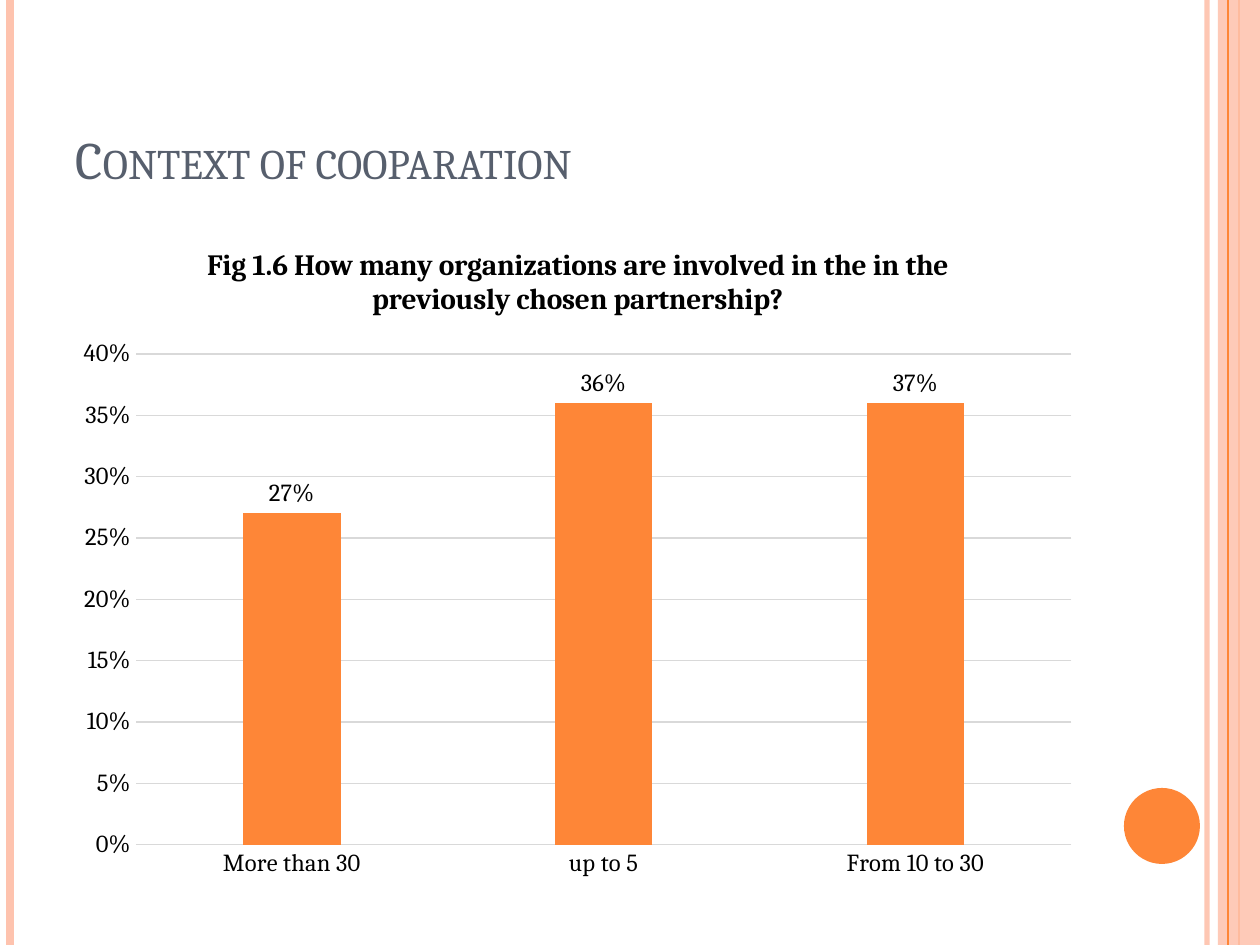
from lxml import etree
from pptx import Presentation
from pptx.chart.data import CategoryChartData
from pptx.dml.color import RGBColor
from pptx.enum.chart import XL_CHART_TYPE, XL_LABEL_POSITION, XL_TICK_MARK
from pptx.enum.shapes import MSO_CONNECTOR, MSO_SHAPE
from pptx.enum.text import MSO_ANCHOR, MSO_AUTO_SIZE, PP_ALIGN
from pptx.oxml.ns import qn
from pptx.util import Pt

COLUMNS = XL_CHART_TYPE.COLUMN_CLUSTERED
OUTSIDE_END = XL_LABEL_POSITION.OUTSIDE_END
NO_TICK = XL_TICK_MARK.NONE
STRAIGHT = MSO_CONNECTOR.STRAIGHT
RECTANGLE, OVAL = MSO_SHAPE.RECTANGLE, MSO_SHAPE.OVAL
BOTTOM, LEFT = MSO_ANCHOR.BOTTOM, PP_ALIGN.LEFT
FIXED_SIZE = MSO_AUTO_SIZE.NONE

EMU_PER_PX = 914400 / 126
WIDTH, HEIGHT = 1260, 945
CONTENT_LEFT, CONTENT_WIDTH = 63, 1029
FONT = "Cambria"
ORANGE, PEACH, GRAY, SLATE, BLACK = "FE8637", "FEC3AE", "D9D9D9", "575F6D", "000000"


def px(*lengths):
    return [round(length * EMU_PER_PX) for length in lengths]


def paint(fill, color, opacity=100):
    fill.solid()
    fill.fore_color.rgb = RGBColor.from_string(color)
    if opacity < 100:
        tint = fill._xPr.find(qn("a:solidFill")).find(qn("a:srgbClr"))
        etree.SubElement(tint, qn("a:alpha")).set("val", str(opacity * 1000))


prs = Presentation()
prs.slide_width, prs.slide_height = px(WIDTH, HEIGHT)
slide = prs.slides.add_slide(prs.slide_layouts[5])
shapes = slide.shapes

border_parts = [
    (STRAIGHT, (1207, 0, 1207, HEIGHT), PEACH, 93, 3),
    (STRAIGHT, (10, 0, 10, HEIGHT), PEACH, 100, 4.5),
    (STRAIGHT, (1239, 0, 1239, HEIGHT), ORANGE, 100, 1.5),
    (RECTANGLE, (1218, 0, 42, HEIGHT), PEACH, 87, None),
    (STRAIGHT, (1228, 0, 1228, HEIGHT), ORANGE, 100, 0.75),
    (OVAL, (1124, 788, 76, 76), ORANGE, 100, None),
]
for kind, box, color, opacity, weight in border_parts:
    if kind == STRAIGHT and weight:
        stripe = shapes.add_connector(kind, *px(*box))
        stripe.line.width = Pt(weight)
        paint(stripe.line.fill, color, opacity)
        etree.SubElement(stripe._element.spPr, qn("a:effectLst"))
    else:
        ornament = shapes.add_shape(kind, *px(*box))
        ornament.shadow.inherit = False
        ornament.line.fill.background()
        paint(ornament.fill, color, opacity)

heading = shapes.title
heading.left, heading.top, heading.width, heading.height = px(CONTENT_LEFT, 38, CONTENT_WIDTH, 158)
heading.text_frame.auto_size = FIXED_SIZE
heading.text_frame.vertical_anchor = BOTTOM
heading_line = heading.text_frame.paragraphs[0]
heading_line.alignment = LEFT

answers = CategoryChartData(number_format="0%")
answers.categories = ["More than 30", "up to 5", "From 10 to 30"]
answers.add_series("Series 1", [0.27, 0.36, 0.36])
chart = shapes.add_chart(COLUMNS, *px(CONTENT_LEFT, 220, CONTENT_WIDTH, 672), answers).chart
chart.has_legend = False
chart.has_title = True
chart.chart_title.include_in_layout = False
chart.font.name = FONT
chart.font.size = Pt(14)
paint(chart.font.fill, BLACK)

answer_axis, share_axis = chart.category_axis, chart.value_axis
for axis in (answer_axis, share_axis):
    axis.major_tick_mark = NO_TICK
share_axis.minimum_scale, share_axis.maximum_scale, share_axis.major_unit = 0, 0.4, 0.05
share_axis.format.line.fill.background()
for rule in (answer_axis.format.line, share_axis.major_gridlines.format.line):
    rule.width = Pt(0.75)
    paint(rule.fill, GRAY)

plot = chart.plots[0]
plot.vary_by_categories = False
plot.gap_width, plot.overlap = 219, -27
organizations = plot.series[0]
paint(organizations.format.fill, ORANGE)
shares = organizations.data_labels
shares.show_value = True
shares.position = OUTSIDE_END
for percentages in (share_axis.tick_labels, shares):
    percentages.number_format = "0%"
    percentages.number_format_is_linked = False

last_share = organizations.points[2].data_label
question_line = chart.chart_title.text_frame.paragraphs[0]
last_share_line = last_share.text_frame.paragraphs[0]
last_share.position = OUTSIDE_END

question = "Fig 1.6 How many organizations are involved in the in the previously chosen partnership?"
wording = [
    (heading_line, "Context of cooparation", 30, SLATE, False),
    (question_line, question, 16.8, BLACK, True),
    (last_share_line, "37%", 14, BLACK, False),
]
for line, text, size, color, bold in wording:
    run = line.add_run()
    run.text = text
    run.font.name = FONT
    run.font.size = Pt(size)
    run.font.bold = bold
    paint(run.font.fill, color)
heading_line.runs[0].font._element.set("cap", "small")

prs.save("out.pptx")
